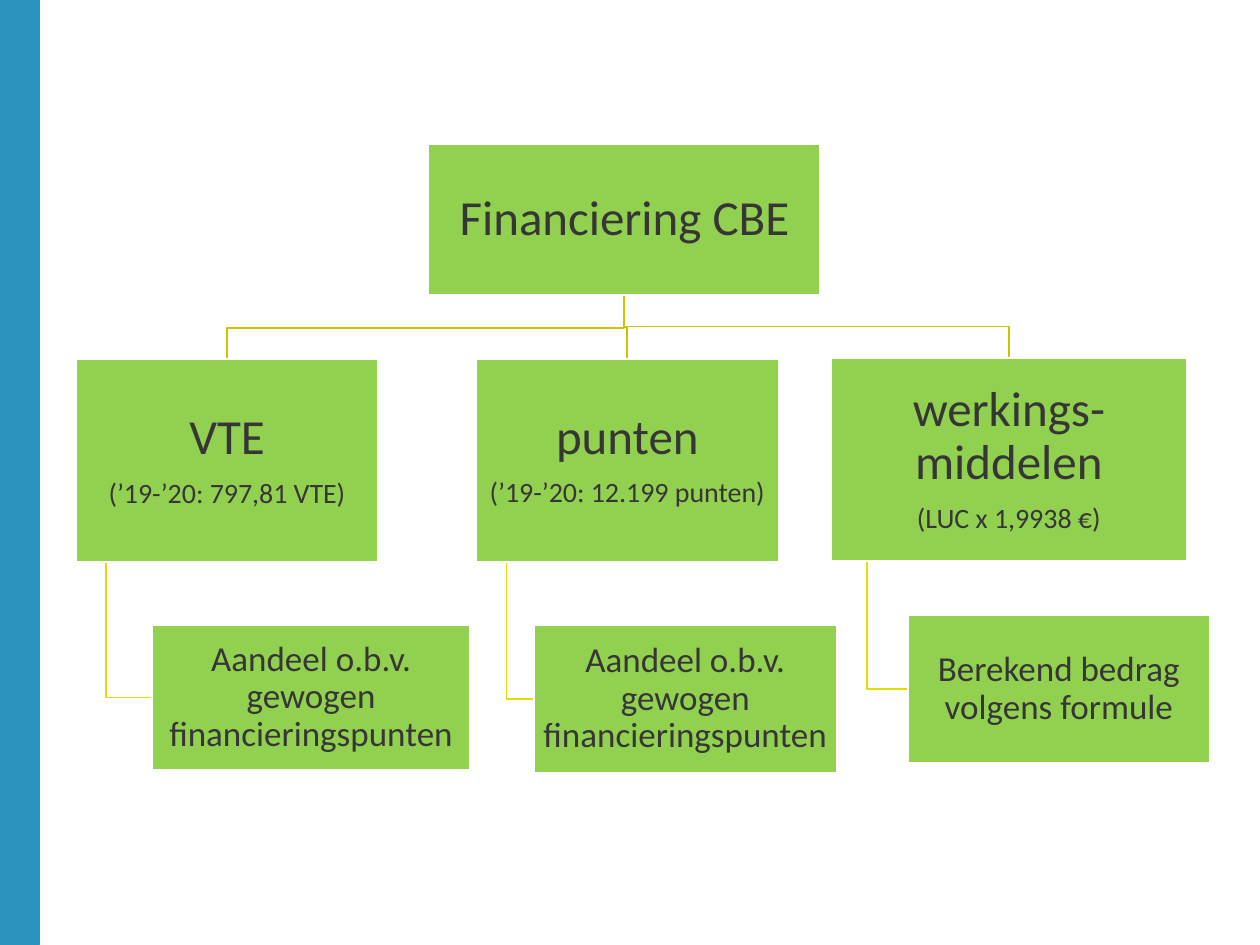
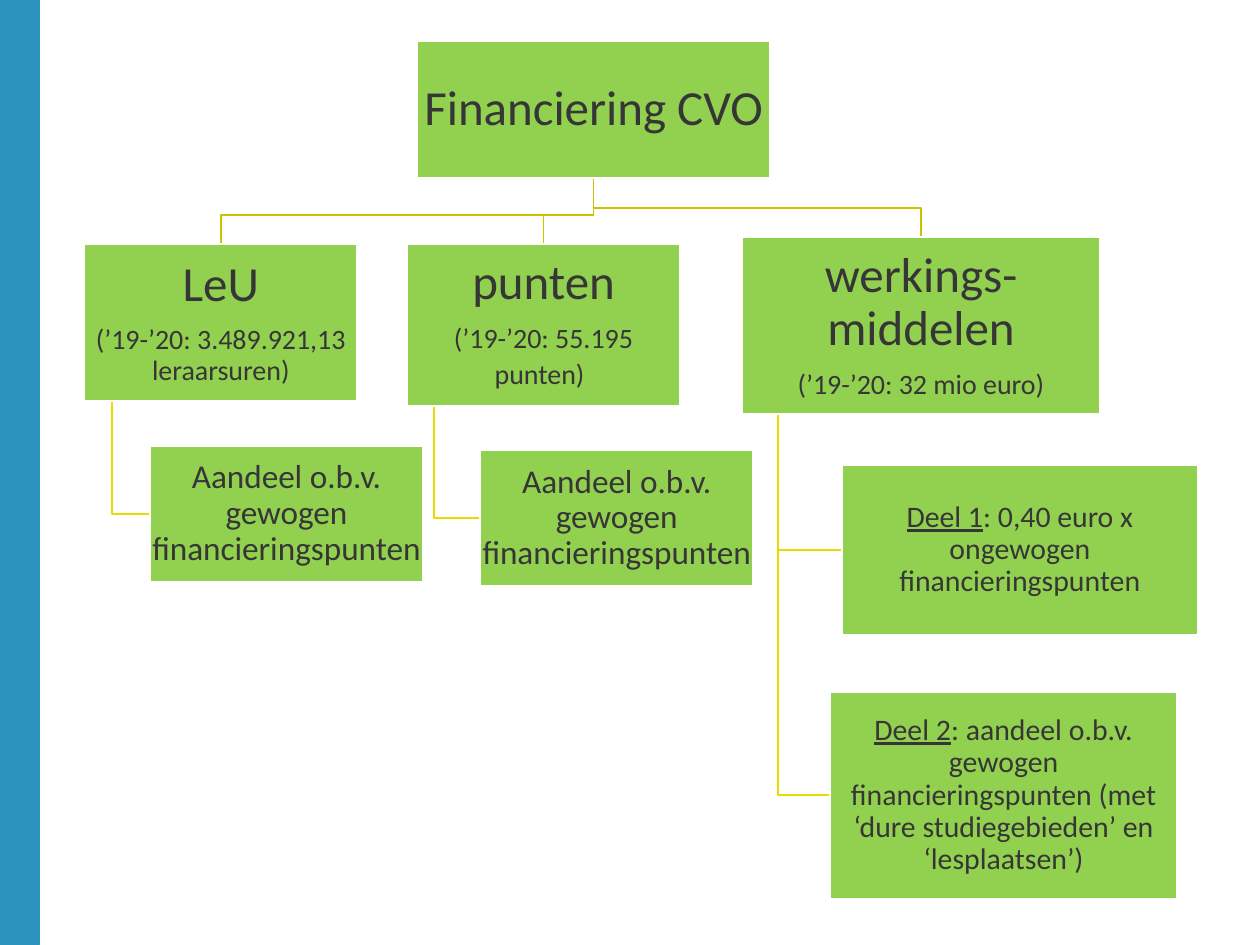
"""Build two organisation charts on the financing of adult education centres."""
from dataclasses import dataclass, field

from pptx import Presentation
from pptx.dml.color import RGBColor
from pptx.enum.shapes import MSO_SHAPE
from pptx.enum.text import MSO_ANCHOR, PP_ALIGN
from pptx.util import Pt

BAND_BLUE = RGBColor(0x2B, 0x92, 0xBE)
BOX_GREEN = RGBColor(0x92, 0xD0, 0x50)
TEXT_GREY = RGBColor(0x37, 0x36, 0x36)
WHITE = RGBColor(0xFF, 0xFF, 0xFF)
TRUNK_OLIVE = RGBColor(0xCC, 0xC2, 0x00)
TWIG_YELLOW = RGBColor(0xE7, 0xDC, 0x00)

FONT = "Calibri"
SLIDE_WIDTH, SLIDE_HEIGHT = 720, 540
BAND_WIDTH = 22.3
HEADING, DETAIL = 28, 16
SHARE = "Aandeel o.b.v. gewogen financieringspunten"


@dataclass
class Box:
    """A chart box in points; each paragraph is a list of (text, format) runs."""
    left: float
    top: float
    width: float
    height: float
    paragraphs: list
    children: list = field(default_factory=list)
    inset: float = 1.4

    @property
    def center(self):
        return self.left + self.width / 2

    @property
    def middle(self):
        return self.top + self.height / 2

    @property
    def bottom(self):
        return self.top + self.height


def run(text, size, underline=False):
    """Describe one run of text."""
    return text, {"size": size, "underline": underline}


def heading(title, *details):
    """Return a heading paragraph, followed by one paragraph of details if any."""
    return [[run(title, HEADING)]] + ([list(details)] if details else [])


def leaf(left, top, width, height, *runs):
    """Return a lowest-level box with a single paragraph."""
    return Box(left, top, width, height, [list(runs)], inset=0.7)


def part(label, text):
    """Return the runs of a paragraph that opens with an underlined label."""
    return run(label, 17, underline=True), run(text, 17)


def add_text(paragraph, text, *, size, underline=False):
    """Add a formatted run to a paragraph."""
    text_run = paragraph.add_run()
    text_run.text = text
    font = text_run.font
    font.name = FONT
    font.size = Pt(size)
    font.color.rgb = TEXT_GREY
    if underline:
        font.underline = True


def add_rectangle(slide, left, top, width, height, fill, line, line_width):
    """Add a filled rectangle without a shadow."""
    shape = slide.shapes.add_shape(
        MSO_SHAPE.RECTANGLE, Pt(left), Pt(top), Pt(width), Pt(height))
    shape.shadow.inherit = False
    shape.fill.solid()
    shape.fill.fore_color.rgb = fill
    shape.line.color.rgb = line
    shape.line.width = Pt(line_width)
    return shape


def add_box(slide, box):
    """Draw a chart box with its centred paragraphs."""
    shape = add_rectangle(slide, box.left, box.top, box.width, box.height,
                          BOX_GREEN, WHITE, 1)
    frame = shape.text_frame
    frame.word_wrap = True
    frame.vertical_anchor = MSO_ANCHOR.MIDDLE
    frame.margin_left = frame.margin_right = Pt(box.inset)
    frame.margin_top = frame.margin_bottom = Pt(box.inset)
    for index, runs in enumerate(box.paragraphs):
        paragraph = frame.add_paragraph() if index else frame.paragraphs[0]
        paragraph.alignment = PP_ALIGN.CENTER
        paragraph.line_spacing = 0.9
        paragraph.space_after = Pt(8)
        for text, text_format in runs:
            add_text(paragraph, text, **text_format)


def add_elbow(slide, points, color):
    """Draw an open line with right-angled bends."""
    start, *bends = [(Pt(x), Pt(y)) for x, y in points]
    builder = slide.shapes.build_freeform(*start)
    builder.add_line_segments(bends, close=False)
    shape = builder.convert_to_shape()
    shape.shadow.inherit = False
    shape.fill.background()
    shape.line.color.rgb = color
    shape.line.width = Pt(1)


def add_chart_slide(presentation, root, drop):
    """Add a slide with the side band, the branching lines and the boxes."""
    slide = presentation.slides.add_slide(presentation.slide_layouts[6])
    add_rectangle(slide, 0, 0, BAND_WIDTH, SLIDE_HEIGHT, BAND_BLUE, BAND_BLUE, 0.5)
    boxes = [root]
    for branch in reversed(root.children):
        stem = branch.left + branch.width / 10
        for child in reversed(branch.children):
            add_elbow(slide, [(stem, branch.bottom), (stem, child.middle),
                              (child.left, child.middle)], TWIG_YELLOW)
        bend = branch.top - drop
        add_elbow(slide, [(root.center, root.bottom), (root.center, bend),
                          (branch.center, bend), (branch.center, branch.top)],
                  TRUNK_OLIVE)
    for branch in root.children:
        boxes += [branch, *branch.children]
    for box in boxes:
        add_box(slide, box)


def cbe_chart():
    """Return the boxes of the CBE chart."""
    return Box(244.8, 82.3, 224, 86.5, heading("Financiering CBE"), [
        Box(43.4, 205.3, 172.8, 116,
            heading("VTE", run("(’19-’20: 797,81 VTE)", DETAIL)),
            [leaf(87, 357.2, 181.6, 82.7, run(SHARE, 20))]),
        Box(272.1, 205.2, 172.8, 115.8,
            heading("punten", run("(’19-’20: 12.199 punten)", DETAIL)),
            [leaf(305.2, 357.2, 172.8, 84.3, run(SHARE, 20))]),
        Box(475, 204.6, 203, 115.8,
            heading("werkings-middelen", run("(LUC x 1,9938 €)", DETAIL)),
            [leaf(518.7, 351.8, 172.8, 84.2,
                  run("Berekend bedrag volgens formule", 20))]),
    ])


def cvo_chart():
    """Return the boxes of the CVO chart."""
    return Box(238.4, 23.7, 201.6, 78, heading("Financiering CVO"), [
        Box(48.2, 139.5, 156, 89.6,
            heading("LeU", run("(’19-’20: 3.489.921,13 leraarsuren)", DETAIL)),
            [leaf(85.7, 254.7, 156, 77.8, run(SHARE, 19))]),
        Box(232.6, 139.6, 156, 92.3,
            heading("punten", run("(’19-’20: 55.195 punten)", DETAIL), run(" ", 20)),
            [leaf(274.4, 257.2, 156, 77.8, run(SHARE, 19))]),
        Box(424.1, 135.5, 204.5, 101.2,
            heading("werkings-middelen", run("(’19-’20: 32 mio euro)", DETAIL)),
            [leaf(481.2, 265.8, 203.2, 97,
                  *part("Deel 1", ": 0,40 euro x ongewogen financieringspunten")),
             leaf(474.5, 395.5, 198, 118,
                  *part("Deel 2", ": aandeel o.b.v. gewogen financieringspunten "
                        "(met ‘dure studiegebieden’ en ‘lesplaatsen’)"))]),
    ])


def main():
    """Build and save the presentation."""
    presentation = Presentation()
    presentation.slide_width = Pt(SLIDE_WIDTH)
    presentation.slide_height = Pt(SLIDE_HEIGHT)
    add_chart_slide(presentation, cbe_chart(), drop=18)
    add_chart_slide(presentation, cvo_chart(), drop=16.5)
    presentation.save("out.pptx")


if __name__ == "__main__":
    main()
